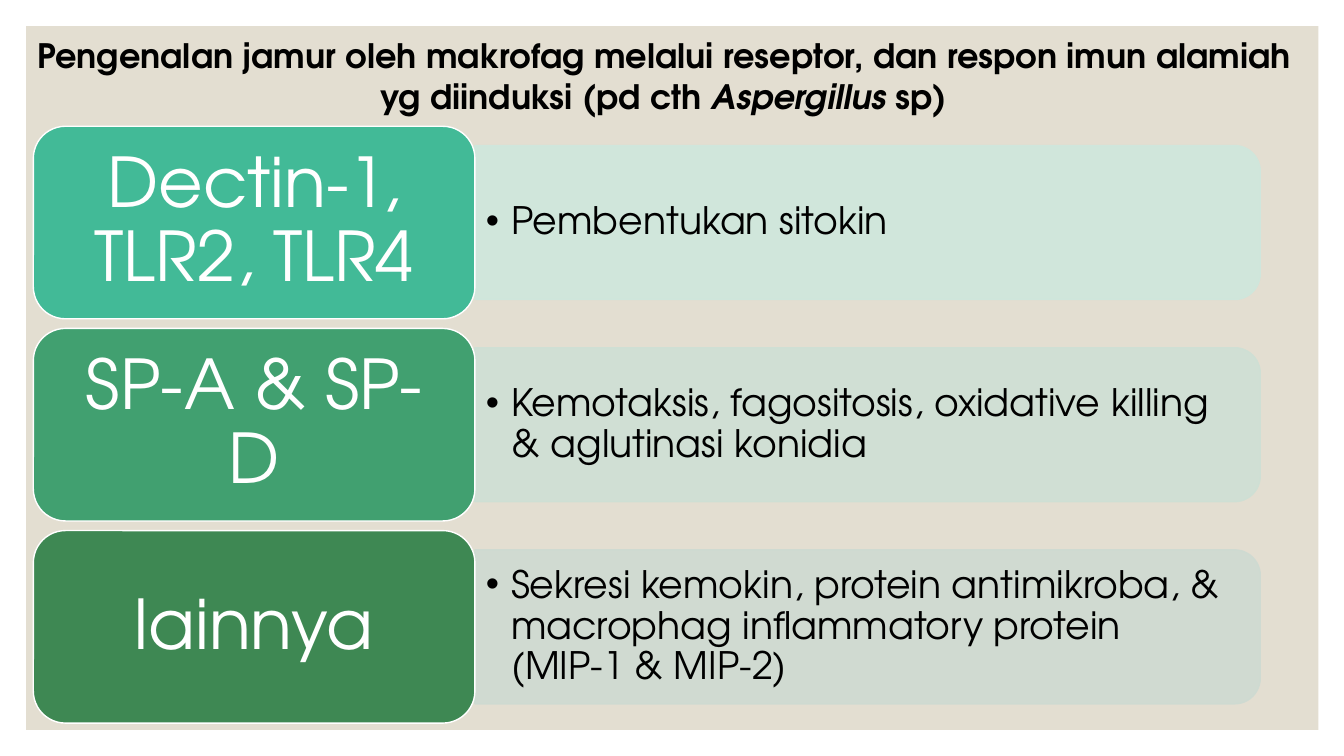
from dataclasses import dataclass

from lxml import etree
from pptx import Presentation
from pptx.dml.color import RGBColor
from pptx.enum.shapes import MSO_SHAPE
from pptx.enum.text import MSO_ANCHOR, MSO_AUTO_SIZE, PP_ALIGN
from pptx.oxml.ns import qn
from pptx.util import Pt

RECT = MSO_SHAPE.RECTANGLE
ROUND = MSO_SHAPE.ROUNDED_RECTANGLE
TAB = MSO_SHAPE.ROUND_2_SAME_RECTANGLE
TOP, MIDDLE = MSO_ANCHOR.TOP, MSO_ANCHOR.MIDDLE
LEFT, CENTER = PP_ALIGN.LEFT, PP_ALIGN.CENTER
FIXED = MSO_AUTO_SIZE.NONE

FONT = "TeX Gyre Adventor"
BLACK = RGBColor(0x00, 0x00, 0x00)
WHITE = RGBColor(0xFF, 0xFF, 0xFF)
SAND = RGBColor(0xE3, 0xDE, 0xD1)

ROW_TOP, ROW_STEP = 90.2, 144.4
LABEL_X, LABEL_W, LABEL_H = 23.8, 315.4, 137.5
BAND_X, BAND_W, BAND_H = 339.2, 561, 110
LIST_W, LIST_H = 555, 99.4
INDENT = Pt(18)


@dataclass
class Row:
    label: str
    effect: str
    dark: RGBColor
    pale: RGBColor


ROWS = [
    Row("Dectin-1, TLR2, TLR4", "Pembentukan sitokin",
        RGBColor(0x42, 0xBA, 0x97), RGBColor(0xCF, 0xE7, 0xDD)),
    Row("SP-A & SP-D",
        "Kemotaksis, fagositosis, oxidative killing & aglutinasi konidia",
        RGBColor(0x41, 0xA0, 0x70), RGBColor(0xCE, 0xE0, 0xD5)),
    Row("lainnya",
        "Sekresi kemokin, protein antimikroba, & macrophag inflammatory "
        "protein (MIP-1 & MIP-2)",
        RGBColor(0x3E, 0x88, 0x53), RGBColor(0xCE, 0xDA, 0xD1)),
]

TITLE = [
    ("Pengenalan jamur oleh makrofag melalui reseptor, dan respon imun "
     "alamiah yg diinduksi (pd cth ", False),
    ("Aspergillus ", True),
    ("sp)", False),
]


def place(shape, x: float, y: float, w: float, h: float) -> None:
    shape.left, shape.top = Pt(x), Pt(y)
    shape.width, shape.height = Pt(w), Pt(h)


def add_block(slide, kind, x: float, y: float, w: float, h: float,
              fill: RGBColor, line: RGBColor | None = None):
    shape = slide.shapes.add_shape(kind, Pt(x), Pt(y), Pt(w), Pt(h))
    shape.shadow.inherit = False
    shape.fill.solid()
    shape.fill.fore_color.rgb = fill
    if line is None:
        shape.line.fill.background()
    else:
        shape.line.color.rgb = line
        shape.line.width = Pt(1)
    return shape


def set_frame(shape, anchor, side: float, edge: float) -> None:
    frame = shape.text_frame
    frame.word_wrap = True
    frame.auto_size = FIXED
    frame.vertical_anchor = anchor
    frame.margin_left = frame.margin_right = Pt(side)
    frame.margin_top = frame.margin_bottom = Pt(edge)


def set_para(para, size: float, color: RGBColor, align, space: float,
             bold: bool = False) -> None:
    para.alignment = align
    para.line_spacing = space
    para.space_before = para.space_after = Pt(0)
    para.font.name = FONT
    para.font.size = Pt(size)
    para.font.bold = bold
    para.font.color.rgb = color


def add_bullet(para) -> None:
    props = para._p.get_or_add_pPr()
    props.set("marL", str(INDENT))
    props.set("indent", str(-INDENT))
    font = etree.Element(qn("a:buFont"), typeface="Arial")
    mark = etree.Element(qn("a:buChar"), char="•")
    base = props.find(qn("a:defRPr"))
    base.addprevious(font)
    base.addprevious(mark)


def fade(shape, share: int) -> None:
    for color in shape._element.spPr.iter(qn("a:srgbClr")):
        etree.SubElement(color, qn("a:alpha"), val=str(share * 1000))


def add_title(slide) -> None:
    title = slide.shapes.title
    slide.shapes._spTree.append(title._element)
    place(title, 18, 21.6, 912.2, 65.5)
    set_frame(title, TOP, 7.2, 3.6)
    para = title.text_frame.paragraphs[0]
    set_para(para, 24, BLACK, CENTER, 1.0, True)
    for text, slant in TITLE:
        run = para.add_run()
        run.text = text
        if slant:
            run.font.italic = True


def add_row(slide, row: Row, body, top: float) -> None:
    mid = top + LABEL_H / 2
    band = add_block(slide, TAB, BAND_X + (BAND_W - BAND_H) / 2,
                     mid - BAND_W / 2, BAND_H, BAND_W, row.pale, row.pale)
    band.rotation = 90
    fade(band, 90)

    slide.shapes._spTree.append(body._element)
    place(body, BAND_X, mid - LIST_H / 2, LIST_W, LIST_H)
    set_frame(body, MIDDLE, 7.9, 4.3)
    body.text_frame.text = row.effect
    para = body.text_frame.paragraphs[0]
    set_para(para, 27, BLACK, LEFT, 0.9)
    add_bullet(para)

    label = add_block(slide, ROUND, LABEL_X, top, LABEL_W, LABEL_H,
                      row.dark, WHITE)
    set_frame(label, MIDDLE, 14.4, 7.2)
    label.text_frame.text = row.label
    set_para(label.text_frame.paragraphs[0], 49, WHITE, CENTER, 0.9)


def main() -> None:
    deck = Presentation()
    deck.slide_width, deck.slide_height = Pt(960), Pt(540)
    slide = deck.slides.add_slide(deck.slide_layouts.get_by_name("Comparison"))
    bodies = [item for item in slide.placeholders
              if item.placeholder_format.idx in range(1, 5)]
    spare = bodies.pop()
    spare._element.getparent().remove(spare._element)

    add_block(slide, RECT, 18.7, 18.7, 923, 502.6, SAND)
    for index, (row, body) in enumerate(zip(ROWS, bodies)):
        add_row(slide, row, body, ROW_TOP + index * ROW_STEP)
    add_title(slide)
    deck.save("out.pptx")


if __name__ == "__main__":
    main()
